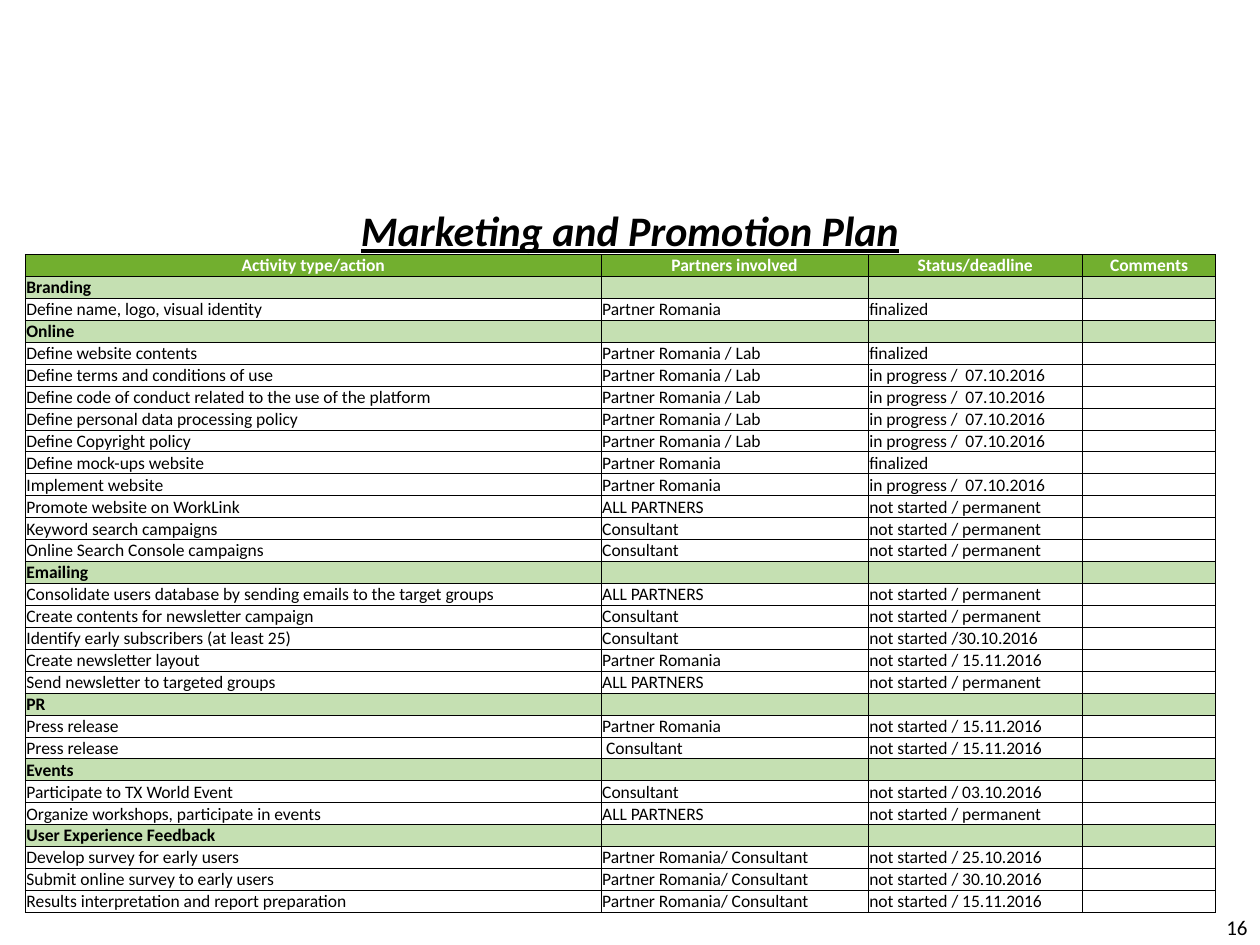
from pptx import Presentation
from pptx.dml.color import RGBColor
from pptx.enum.text import MSO_ANCHOR, PP_ALIGN
from pptx.oxml.xmlchemy import OxmlElement
from pptx.util import Inches, Pt

BLACK = RGBColor(0x00, 0x00, 0x00)
WHITE = RGBColor(0xFF, 0xFF, 0xFF)
HEADER_GREEN = RGBColor(0x72, 0xAF, 0x2F)
SECTION_GREEN = RGBColor(0xC5, 0xE0, 0xB2)

DEVELOPER = "Partner Romania"
CONSULTANT = "Consultant"
WEB_TEAM = "Partner Romania / Lab"
SURVEY_TEAM = "Partner Romania/ Consultant"
EVERYONE = "ALL PARTNERS"
FINALIZED = "finalized"
IN_PROGRESS = "in progress /  07.10.2016"
PERMANENT = "not started / permanent"
MID_NOVEMBER = "not started / 15.11.2016"

HEADERS = ("Activity type/action", "Partners involved", "Status/deadline", "Comments")
COLUMN_WIDTHS = (4.57, 2.12, 1.7, 1.06)
ROW_HEIGHT = 0.17

PLAN = {
    "Branding": [("Define name, logo, visual identity", DEVELOPER, FINALIZED)],
    "Online": [
        ("Define website contents", WEB_TEAM, FINALIZED),
        ("Define terms and conditions of use", WEB_TEAM, IN_PROGRESS),
        ("Define code of conduct related to the use of the platform", WEB_TEAM, IN_PROGRESS),
        ("Define personal data processing policy", WEB_TEAM, IN_PROGRESS),
        ("Define Copyright policy", WEB_TEAM, IN_PROGRESS),
        ("Define mock-ups website", DEVELOPER, FINALIZED),
        ("Implement website", DEVELOPER, IN_PROGRESS),
        ("Promote website on WorkLink", EVERYONE, PERMANENT),
        ("Keyword search campaigns", CONSULTANT, PERMANENT),
        ("Online Search Console campaigns", CONSULTANT, PERMANENT),
    ],
    "Emailing": [
        ("Consolidate users database by sending emails to the target groups",
         EVERYONE, PERMANENT),
        ("Create contents for newsletter campaign", CONSULTANT, PERMANENT),
        ("Identify early subscribers (at least 25)", CONSULTANT, "not started /30.10.2016"),
        ("Create newsletter layout", DEVELOPER, MID_NOVEMBER),
        ("Send newsletter to targeted groups", EVERYONE, PERMANENT),
    ],
    "PR": [
        ("Press release", DEVELOPER, MID_NOVEMBER),
        ("Press release", " " + CONSULTANT, MID_NOVEMBER),
    ],
    "Events": [
        ("Participate to TX World Event", CONSULTANT, "not started / 03.10.2016"),
        ("Organize workshops, participate in events", EVERYONE, PERMANENT),
    ],
    "User Experience Feedback": [
        ("Develop survey for early users", SURVEY_TEAM, "not started / 25.10.2016"),
        ("Submit online survey to early users", SURVEY_TEAM, "not started / 30.10.2016"),
        ("Results interpretation and report preparation", SURVEY_TEAM, MID_NOVEMBER),
    ],
}


class SlideBuilder:
    font_name = "Calibri"
    cell_size = 10
    border_width = Pt(0.5)

    def __init__(self, slide):
        self.slide = slide

    def style(self, paragraph, size, color=BLACK, bold=False, align=PP_ALIGN.LEFT):
        paragraph.alignment = align
        font = paragraph.font
        font.name = self.font_name
        font.size = Pt(size)
        font.bold = bold
        font.color.rgb = color
        return font

    def text(self, text, left, top, width, height, size, align, bold=False):
        shape = self.slide.shapes.add_textbox(
            Inches(left), Inches(top), Inches(width), Inches(height))
        frame = shape.text_frame
        frame.word_wrap = True
        frame.vertical_anchor = MSO_ANCHOR.MIDDLE
        frame.text = text
        return self.style(frame.paragraphs[0], size, bold=bold, align=align)

    def border(self, cell):
        properties = cell._tc.get_or_add_tcPr()
        for side in ("a:lnL", "a:lnR", "a:lnT", "a:lnB"):
            line = OxmlElement(side)
            line.set("w", str(int(self.border_width)))
            fill = OxmlElement("a:solidFill")
            color = OxmlElement("a:srgbClr")
            color.set("val", str(BLACK))
            fill.append(color)
            line.append(fill)
            properties.append(line)

    def cell(self, cell, text, fill=None, anchor=MSO_ANCHOR.BOTTOM, **text_style):
        self.border(cell)
        cell.margin_left = cell.margin_right = Inches(0.01)
        cell.margin_top = Pt(0.5)
        cell.margin_bottom = 0
        cell.vertical_anchor = anchor
        if fill is None:
            cell.fill.background()
        else:
            cell.fill.solid()
            cell.fill.fore_color.rgb = fill
        paragraph = cell.text_frame.paragraphs[0]
        if text:
            paragraph.text = text
        else:
            # An empty cell takes its height from the end-of-paragraph size.
            end_mark = OxmlElement("a:endParaRPr")
            end_mark.set("sz", str(self.cell_size * 100))
            paragraph._p.append(end_mark)
        self.style(paragraph, self.cell_size, **text_style)

    def table(self, rows, left, top):
        """Draw rows given as (texts, cell style) pairs."""
        frame = self.slide.shapes.add_table(
            len(rows), len(COLUMN_WIDTHS), Inches(left), Inches(top),
            Inches(sum(COLUMN_WIDTHS)), Inches(ROW_HEIGHT * len(rows)))
        table = frame.table
        table.first_row = table.horz_banding = False
        for column, width in zip(table.columns, COLUMN_WIDTHS):
            column.width = Inches(width)
        for row, (texts, cell_style) in zip(table.rows, rows):
            row.height = Inches(ROW_HEIGHT)
            for index, cell in enumerate(row.cells):
                text = texts[index] if index < len(texts) else ""
                self.cell(cell, text, **cell_style)


def plan_rows():
    header_style = dict(fill=HEADER_GREEN, anchor=MSO_ANCHOR.MIDDLE, color=WHITE,
                        bold=True, align=PP_ALIGN.CENTER)
    rows = [(HEADERS, header_style)]
    for section, activities in PLAN.items():
        rows.append(((section,), dict(fill=SECTION_GREEN, bold=True)))
        rows.extend((activity, {}) for activity in activities)
    return rows


def main():
    presentation = Presentation()
    presentation.slide_width = Inches(10)
    presentation.slide_height = Inches(7.5)
    builder = SlideBuilder(presentation.slides.add_slide(presentation.slide_layouts[6]))

    title_font = builder.text("Marketing and Promotion Plan", 0.5, 1.55, 9, 0.55,
                              24, PP_ALIGN.CENTER, bold=True)
    title_font.italic = True
    title_font.underline = True
    builder.text("16", 7.67, 7.21, 2.33, 0.29, 12, PP_ALIGN.RIGHT)
    builder.table(plan_rows(), 0.2, 2.02)

    presentation.save("out.pptx")


if __name__ == "__main__":
    main()
